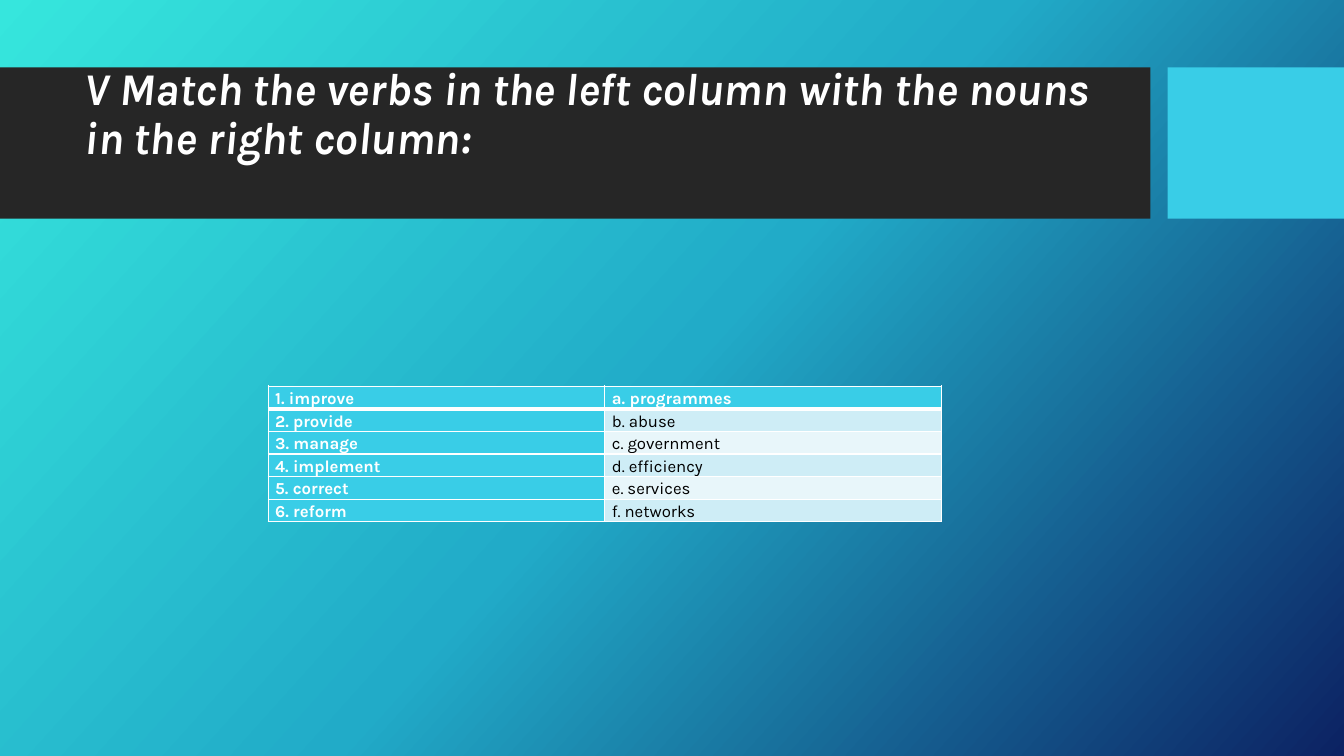
from copy import deepcopy
from typing import NamedTuple

from pptx import Presentation
from pptx.dml.color import RGBColor
from pptx.enum.shapes import MSO_SHAPE
from pptx.enum.text import MSO_ANCHOR, MSO_AUTO_SIZE, PP_ALIGN
from pptx.oxml.ns import qn
from pptx.slide import Slide
from pptx.table import _Cell as Cell
from pptx.util import Inches, Pt
from lxml.etree import SubElement

WIDTH, HEIGHT = Inches(13.33), Inches(7.5)
FONT = "Karla"
WHITE, BLACK, CYAN, CHARCOAL = "FFFFFF", "000000", "39CDE7", "262626"
STRIPES = ("E8F6FA", "CEEDF6")
GRADIENT = ((0, "36E6DD"), (0.5, "21ABC8"), (1, "0C2263"))

TITLE = "V Match the verbs in the left column with the nouns in the right column:"
PAIRS = (
    ("1. improve", "a. programmes"),
    ("2. provide", "b. abuse"),
    ("3. manage", "c. government"),
    ("4. implement", "d. efficiency"),
    ("5. correct", "e. services"),
    ("6. reform", "f. networks"),
)


class Area(NamedTuple):
    """A rectangle in percent of the slide's width and height."""
    left: float
    top: float
    width: float
    height: float

    def emu(self) -> tuple[int, ...]:
        sides = (WIDTH, HEIGHT, WIDTH, HEIGHT)
        return tuple(round(share * side / 100) for share, side in zip(self, sides))


class Panel(NamedTuple):
    area: Area
    color: str


PANELS = (
    Panel(Area(0, 8.93, 85.6, 20), CHARCOAL),
    Panel(Area(86.87, 8.93, 13.13, 20), CYAN),
)
TITLE_AREA = Area(5.55, 10.93, 78.84, 15.73)
TABLE_AREA = Area(19.95, 51.07, 50.11, 17.6)


def rgb(color: str) -> RGBColor:
    return RGBColor.from_string(color)


def paint_background(s: Slide) -> None:
    fill = s.background.fill
    fill.gradient()
    fill.gradient_angle = 360 - 42
    first = s.element.find(".//" + qn("a:gs"))
    first.addnext(deepcopy(first))
    for stop, (position, color) in zip(fill.gradient_stops, GRADIENT):
        stop.position = position
        stop.color.rgb = rgb(color)


def add_panel(s: Slide, panel: Panel) -> None:
    sp = s.shapes.add_shape(MSO_SHAPE.RECTANGLE, *panel.area.emu())
    sp.shadow.inherit = False
    sp.fill.solid()
    sp.fill.fore_color.rgb = rgb(panel.color)
    sp.line.fill.background()
    s.shapes.title.element.addprevious(sp.element)


def write_title(s: Slide) -> None:
    title = s.shapes.title
    title.left, title.top, title.width, title.height = TITLE_AREA.emu()
    tf = title.text_frame
    tf.auto_size = MSO_AUTO_SIZE.NONE
    tf.vertical_anchor = MSO_ANCHOR.MIDDLE
    p = tf.paragraphs[0]
    p.add_run().text = TITLE
    p.add_line_break()
    p.alignment = PP_ALIGN.LEFT
    p.line_spacing = 0.9
    p.font.name, p.font.size = FONT, Pt(32.4)
    p.font.bold = p.font.italic = True
    p.font.color.rgb = rgb(WHITE)


def add_borders(cell: Cell, top: float, bottom: float) -> None:
    """Draw white cell edges, with the top and bottom widths in points."""
    tc_pr = cell._tc.get_or_add_tcPr()
    for side, width in (("L", 1), ("R", 1), ("T", top), ("B", bottom)):
        ln = SubElement(tc_pr, qn(f"a:ln{side}"), w=str(Pt(width)))
        fill = SubElement(ln, qn("a:solidFill"))
        SubElement(fill, qn("a:srgbClr"), val=WHITE)


def fill_cell(cell: Cell, text: str, row: int, col: int) -> None:
    heading = row == 0 or col == 0
    add_borders(cell, top=3 if row == 1 else 1, bottom=3 if row == 0 else 1)
    cell.fill.solid()
    cell.fill.fore_color.rgb = rgb(CYAN if heading else STRIPES[row % 2])
    cell.margin_left = cell.margin_right = Inches(0.07)
    cell.margin_top = cell.margin_bottom = 0
    p = cell.text_frame.paragraphs[0]
    p.add_run().text = text
    p.line_spacing = 1.15
    p.font.name, p.font.size, p.font.bold = FONT, Pt(12), heading
    p.font.color.rgb = rgb(WHITE if heading else BLACK)


def add_pairs_table(s: Slide) -> None:
    table = s.shapes.add_table(len(PAIRS), 2, *TABLE_AREA.emu()).table
    table.first_col = True
    for row, pair in enumerate(PAIRS):
        for col, text in enumerate(pair):
            fill_cell(table.cell(row, col), text, row, col)


def main() -> None:
    prs = Presentation()
    prs.slide_width, prs.slide_height = WIDTH, HEIGHT
    s = prs.slides.add_slide(prs.slide_layouts.get_by_name("Title Only"))
    paint_background(s)
    for panel in PANELS:
        add_panel(s, panel)
    write_title(s)
    add_pairs_table(s)
    prs.save("out.pptx")


if __name__ == "__main__":
    main()
